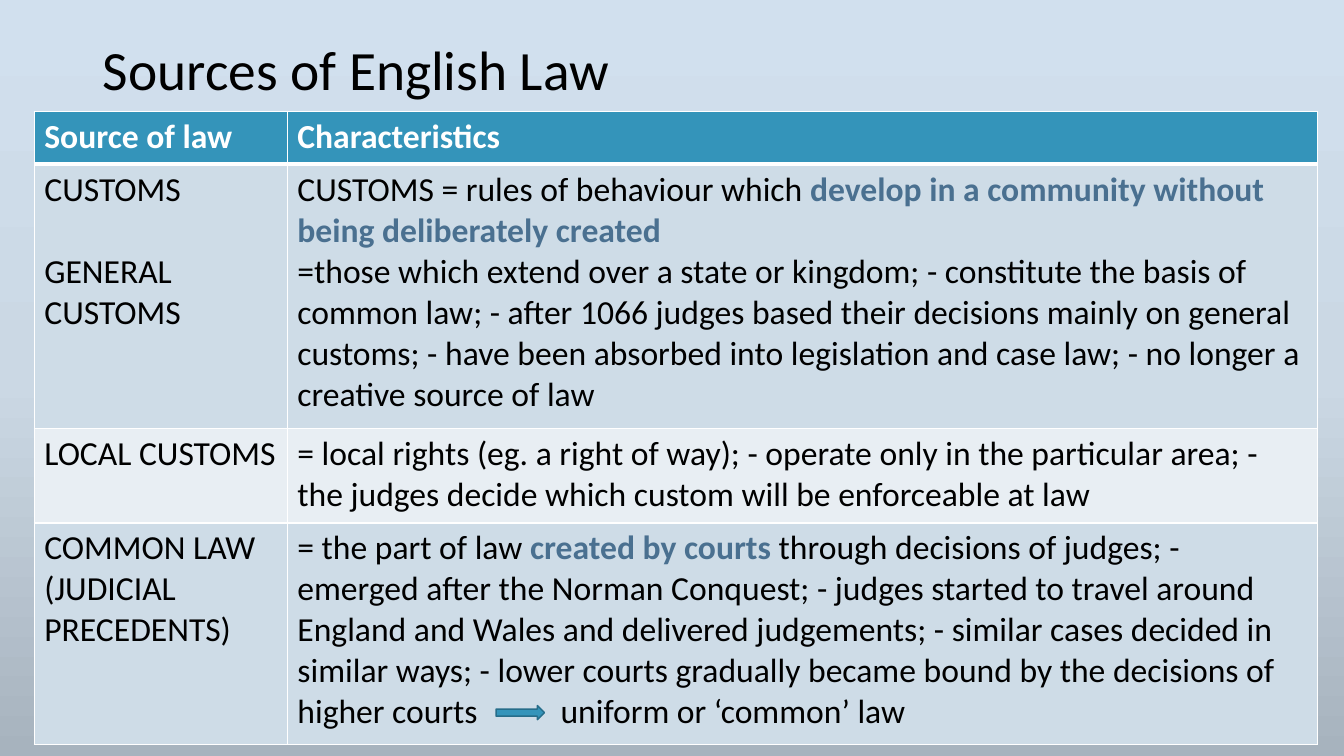
from copy import deepcopy

from lxml import etree
from pptx import Presentation
from pptx.dml.color import RGBColor
from pptx.enum.shapes import MSO_SHAPE
from pptx.enum.text import MSO_ANCHOR, MSO_AUTO_SIZE, PP_ALIGN
from pptx.oxml.ns import qn
from pptx.util import Inches, Pt

ARROW = MSO_SHAPE.RIGHT_ARROW
MIDDLE = MSO_ANCHOR.MIDDLE
NO_FIT = MSO_AUTO_SIZE.NONE
LEFT = PP_ALIGN.LEFT

COLORS = {
    "text": "000000",
    "white": "FFFFFF",
    "key": "4A7090",
    "header": "3494BA",
    "arrow_line": "266D8A",
    "band_dark": "CEDCE7",
    "band_light": "E8EEF3",
}
BACKGROUND = [(0, "D1E0EE"), (0.5, "CBD8E4"), (1, "A7B3BE")]
FORMATS = {
    "title": ({"name": "Calibri", "size": Pt(39.6)}, "text"),
    "header": ({"name": "Calibri", "size": Pt(24), "bold": True}, "white"),
    "body": ({"name": "Calibri", "size": Pt(24), "bold": False}, "text"),
    "key": ({"name": "Calibri", "size": Pt(24), "bold": True}, "key"),
}
COL_WIDTHS = [2.51, 10.22]
ROW_HEIGHTS = [0.52, 2.62, 0.94, 2.2]
ROW_FILLS = ["header", "band_dark", "band_light", "band_dark"]
LINE_GAP = Pt(29.3)
TAB_POS = Inches(2.61)

ROWS = [
    [
        [[("Source of law", "header")]],
        [[("Characteristics", "header")]],
    ],
    [
        [[("CUSTOMS", "body")], [("GENERAL CUSTOMS", "body")]],
        [
            [
                ("CUSTOMS = rules of behaviour which ", "body"),
                ("develop in a community without being deliberately created", "key"),
            ],
            [(
                "=those which extend over a state or kingdom; - constitute the basis "
                "of common law; - after 1066 judges based their decisions mainly on "
                "general customs; - have been absorbed into legislation and case law; "
                "- no longer a creative source of law", "body",
            )],
        ],
    ],
    [
        [[("LOCAL CUSTOMS", "body")]],
        [[(
            "= local rights (eg. a right of way); - operate only in the particular "
            "area; - the judges decide which custom will be enforceable at law", "body",
        )]],
    ],
    [
        [[("COMMON LAW", "body")], [("(JUDICIAL PRECEDENTS)", "body")]],
        [[
            ("= the part of law ", "body"),
            ("created by courts ", "key"),
            (
                "through decisions of judges; - emerged after the Norman Conquest; "
                "- judges started to travel around England and Wales and delivered "
                "judgements; - similar cases decided in similar ways; - lower courts "
                "gradually became bound by the decisions of higher courts\t"
                "uniform or ‘common’ law", "body",
            ),
        ]],
    ],
]


def rgb(name):
    return RGBColor.from_string(COLORS[name])


def add_run(p, text, style):
    r = p.add_run()
    r.text = text
    values, color = FORMATS[style]
    for key, value in values.items():
        setattr(r.font, key, value)
    r.font.color.rgb = rgb(color)


def set_background(slide):
    fill = slide.background.fill
    fill.gradient()
    fill.gradient_angle = 270
    gs_list = slide.element.find(".//" + qn("a:gsLst"))
    gs_list.append(deepcopy(gs_list[-1]))
    for stop, (position, color) in zip(fill.gradient_stops, BACKGROUND):
        stop.position = position
        stop.color.rgb = RGBColor.from_string(color)


def set_borders(cell, widths):
    tc_pr = cell._tc.get_or_add_tcPr()
    for i, (side, width) in enumerate(widths.items()):
        ln = etree.Element(qn("a:ln" + side), w=str(Pt(width)))
        fill = etree.SubElement(ln, qn("a:solidFill"))
        etree.SubElement(fill, qn("a:srgbClr"), val=COLORS["white"])
        tc_pr.insert(i, ln)


def add_tab_stop(p, position):
    tabs = etree.SubElement(p._p.get_or_add_pPr(), qn("a:tabLst"))
    etree.SubElement(tabs, qn("a:tab"), pos=str(position), algn="l")


def add_title(slide, text, left, top, width, height):
    sp = slide.shapes.title
    box = {"left": left, "top": top, "width": width, "height": height}
    for key, value in box.items():
        setattr(sp, key, Inches(value))
    tf = sp.text_frame
    for key, value in {"auto_size": NO_FIT, "vertical_anchor": MIDDLE}.items():
        setattr(tf, key, value)
    p = tf.paragraphs[0]
    for key, value in {"alignment": LEFT, "line_spacing": 0.9}.items():
        setattr(p, key, value)
    add_run(p, text, "title")


def fill_cell(cell, paragraphs):
    tf = cell.text_frame
    for i, runs in enumerate(paragraphs):
        p = tf.add_paragraph() if i else tf.paragraphs[0]
        for text, style in runs:
            add_run(p, text, style)


def add_sources_table(slide, left, top):
    frame = slide.shapes.add_table(
        len(ROW_HEIGHTS), len(COL_WIDTHS), Inches(left), Inches(top),
        Inches(sum(COL_WIDTHS)), Inches(sum(ROW_HEIGHTS)),
    )
    table = frame.table
    for col, width in zip(table.columns, COL_WIDTHS):
        col.width = Inches(width)
    for i, (row, height) in enumerate(zip(table.rows, ROW_HEIGHTS)):
        row.height = Inches(height)
        widths = {"L": 1, "R": 1, "T": 3 if i == 1 else 1, "B": 3 if i == 0 else 1}
        for cell, paragraphs in zip(row.cells, ROWS[i]):
            cell.fill.solid()
            cell.fill.fore_color.rgb = rgb(ROW_FILLS[i])
            set_borders(cell, widths)
            fill_cell(cell, paragraphs)
    table.cell(1, 0).text_frame.paragraphs[1].space_before = LINE_GAP
    add_tab_stop(table.cell(3, 1).text_frame.paragraphs[0], TAB_POS)

    arrow = slide.shapes.add_shape(
        ARROW, Inches(left + 4.58), Inches(top + 5.89), Inches(0.48), Inches(0.14)
    )
    arrow.shadow.inherit = False
    arrow.fill.solid()
    arrow.fill.fore_color.rgb = rgb("header")
    arrow.line.color.rgb = rgb("arrow_line")
    arrow.line.width = Pt(1)


def main():
    prs = Presentation()
    prs.slide_width = Inches(13.33)
    prs.slide_height = Inches(7.5)
    slide = prs.slides.add_slide(prs.slide_layouts[5])
    set_background(slide)
    add_title(slide, "Sources of English Law", 0.92, 0.4, 11.5, 0.64)
    add_sources_table(slide, 0.34, 1.11)
    prs.save("out.pptx")


if __name__ == "__main__":
    main()
